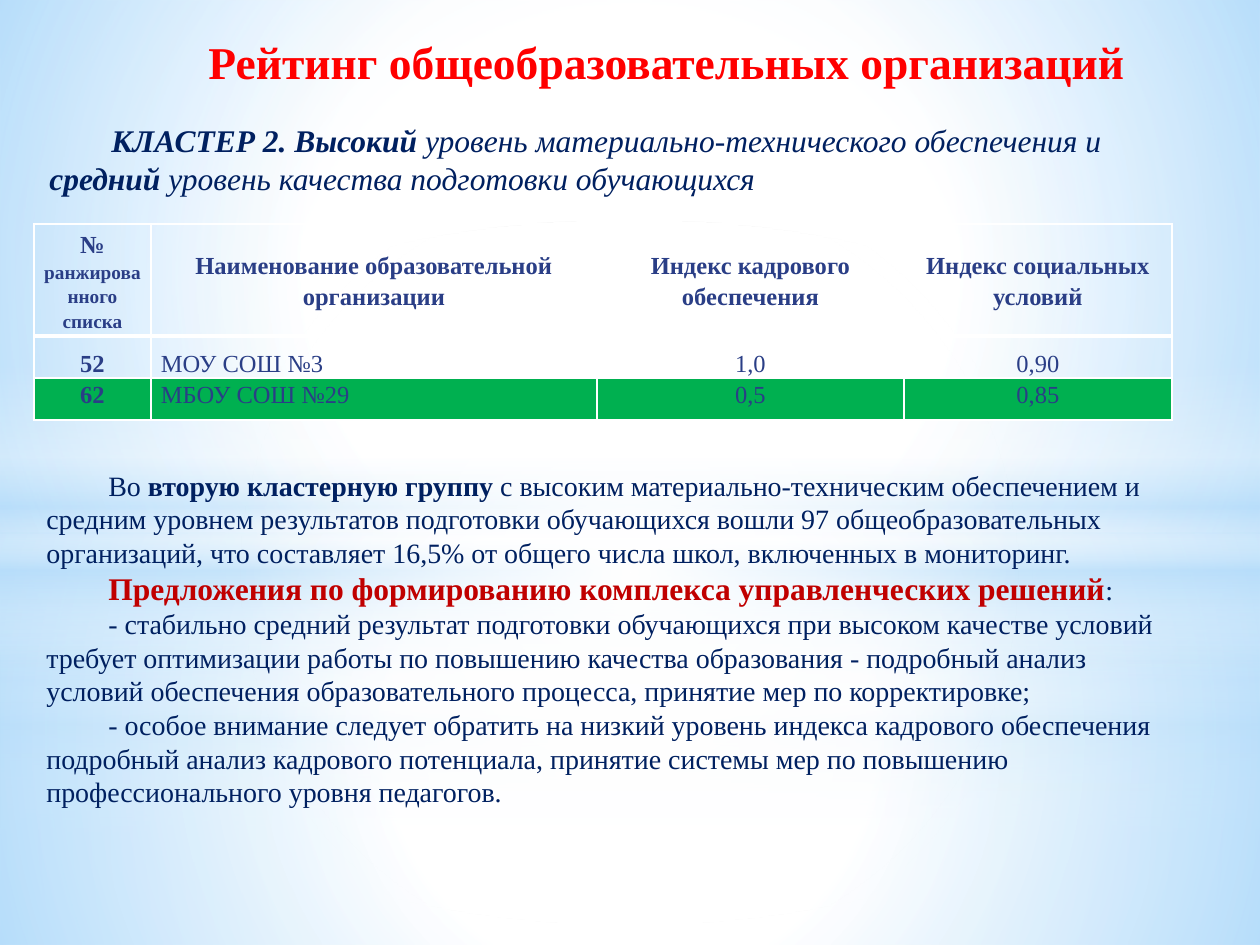
"""Build the slide rating schools in the second cluster."""
from lxml import etree
from pptx import Presentation
from pptx.dml.color import RGBColor
from pptx.enum.shapes import MSO_SHAPE
from pptx.enum.text import MSO_ANCHOR, MSO_AUTO_SIZE, PP_ALIGN
from pptx.oxml import parse_xml
from pptx.oxml.ns import nsdecls
from pptx.util import Pt

RECT, OVAL = MSO_SHAPE.RECTANGLE, MSO_SHAPE.OVAL
TOP, MIDDLE, BOTTOM = MSO_ANCHOR.TOP, MSO_ANCHOR.MIDDLE, MSO_ANCHOR.BOTTOM
LEFT, CENTER = PP_ALIGN.LEFT, PP_ALIGN.CENTER
GROW = MSO_AUTO_SIZE.SHAPE_TO_FIT_TEXT
COLORS = {"white": "FFFFFF", "sky": "B4DCFA", "red": "FF0000", "navy": "002060",
          "crimson": "C00000", "table": "2A3E86", "green": "00B050"}
FONT = "Times New Roman"
INDENT = 62
RADIAL = '<a:path path="circle"><a:fillToRect l="50000" t="50000" r="50000" b="50000"/></a:path>'
LINEAR = '<a:lin ang="5400000" scaled="0"/>'
BAND = [(0, "white", 0), (29, "white", 30), (45, "sky", 40),
        (55, "white", 26), (65, "sky", 60), (100, "white", 0)]


def px(n):
    return round(n * 914400 / 126)


class Deck:
    def __init__(self, width, height):
        self.prs = Presentation()
        self.prs.slide_width, self.prs.slide_height = px(width), px(height)
        self.s = self.prs.slides.add_slide(self.prs.slide_layouts[6])

    def glow(self, kind, top, height, stops, direction=RADIAL):
        sp = self.s.shapes.add_shape(kind, 0, px(top), self.prs.slide_width, px(height))
        sp.shadow.inherit = False
        sp.line.fill.background()
        gs = "".join(
            f'<a:gs pos="{pos * 1000}"><a:srgbClr val="{COLORS[color]}">'
            f'<a:alpha val="{alpha * 1000}"/></a:srgbClr></a:gs>' for pos, color, alpha in stops)
        geometry = sp.element.spPr.find("{*}prstGeom")
        geometry.addnext(parse_xml(f'<a:gradFill {nsdecls("a")} rotWithShape="1">'
                                   f'<a:gsLst>{gs}</a:gsLst>{direction}</a:gradFill>'))

    def run(self, p, text, size, color, bold=False, italic=False):
        r = p.add_run()
        r.text = text
        r.font.name, r.font.size = FONT, Pt(size)
        r.font.bold, r.font.italic = bold, italic
        r.font.color.rgb = RGBColor.from_string(COLORS[color])

    def text(self, box, paragraphs, wrap=True, anchor=TOP):
        tf = self.s.shapes.add_textbox(*map(px, box)).text_frame
        tf.word_wrap, tf.auto_size, tf.vertical_anchor = wrap, GROW, anchor
        for i, runs in enumerate(paragraphs):
            p = tf.add_paragraph() if i else tf.paragraphs[0]
            pPr = p._p.get_or_add_pPr()
            pPr.set("marL", "0")
            pPr.set("indent", str(px(INDENT)))
            for args in runs:
                self.run(p, *args)

    def border(self, cell, side, width):
        ln = etree.SubElement(cell._tc.get_or_add_tcPr(),
                              "{http://schemas.openxmlformats.org/drawingml/2006/main}ln" + side,
                              w=str(Pt(width)))
        ln.append(parse_xml(f'<a:solidFill {nsdecls("a")}>'
                            f'<a:srgbClr val="{COLORS["white"]}"/></a:solidFill>'))

    def cell(self, cell, runs, align, anchor, widths, fill):
        cell.margin_left = cell.margin_right = px(10)
        cell.margin_top = cell.margin_bottom = 0
        cell.vertical_anchor = anchor
        for side, width in zip("LRTB", widths):
            self.border(cell, side, width)
        if fill:
            cell.fill.solid()
            cell.fill.fore_color.rgb = RGBColor.from_string(COLORS[fill])
        else:
            cell.fill.background()
        p = cell.text_frame.paragraphs[0]
        p.alignment, p.line_spacing = align, 1.15
        for text, size, bold in runs:
            self.run(p, text, size, "table", bold)

    def table(self, left, top, widths, heights, rows, styles):
        table = self.s.shapes.add_table(len(rows), len(widths), px(left), px(top),
                                        px(sum(widths)), px(sum(heights))).table
        for column, width in zip(table.columns, widths):
            column.width = px(width)
        for i, (values, (anchor, borders, fill)) in enumerate(zip(rows, styles)):
            table.rows[i].height = px(heights[i])
            for j, value in enumerate(values):
                runs = value if isinstance(value, list) else [(value, 14, i == 0 or j == 0)]
                align = LEFT if i and j == 1 else CENTER
                self.cell(table.cell(i, j), runs, align, anchor, borders, fill)


def main():
    deck = Deck(1260, 945)
    for split, band_top, edge, middle in ((703, 519, 0, 56), (533, 365, 1, 54)):
        deck.glow(RECT, split, 945 - split,
                  [(0, "white", 91 + edge), (37, "white", 76 + edge), (100, "sky", 79 + edge)])
        deck.glow(RECT, 0, split,
                  [(0, "white", 89 + edge), (48, "white", 62 + edge), (100, "sky", 79 + edge)])
        deck.glow(RECT, band_top, 315, BAND, LINEAR)
        deck.glow(OVAL, 221, 703, [(0, "white", 100), (middle, "white", 0)])

    deck.table(
        34, 224, [117, 446, 307, 268], [112, 42, 42],
        [[[("№ ", 14, True), ("ранжированного списка", 11, True)],
          "Наименование образовательной организации",
          "Индекс кадрового обеспечения", "Индекс социальных условий"],
         ["52", "МОУ СОШ №3", "1,0", "0,90"],
         ["62", "МБОУ СОШ №29", "0,5", "0,85"]],
        [(MIDDLE, (1, 1, 1, 3), None), (BOTTOM, (1, 1, 3, 1), None),
         (TOP, (1, 1, 1, 1), "green")])

    deck.text((134, 27, 1013, 68),
              [[("Рейтинг общеобразовательных организаций", 26, "red", True)]],
              wrap=False, anchor=MIDDLE)
    deck.text((37, 115, 1152, 127), [[
        ("КЛАСТЕР 2. Высокий ", 18, "navy", True, True),
        ("уровень материально-технического обеспечения и ", 18, "navy", False, True),
        ("средний ", 18, "navy", True, True),
        ("уровень качества подготовки обучающихся", 18, "navy", False, True)]])
    deck.text((34, 462, 1152, 369), [
        [("Во ", 16, "navy"),
         ("вторую кластерную группу", 16, "navy", True),
         (" с высоким материально-техническим обеспечением и средним уровнем результатов "
          "подготовки обучающихся вошли 97 общеобразовательных организаций, что составляет "
          "16,5% от общего числа школ, включенных в мониторинг.", 16, "navy")],
        [("Предложения по формированию комплекса управленческих решений", 18, "crimson", True),
         (":", 16, "navy")],
        [("- стабильно средний результат подготовки обучающихся при высоком качестве условий "
          "требует оптимизации работы по повышению качества образования - подробный анализ "
          "условий обеспечения образовательного процесса, принятие мер по корректировке;",
          16, "navy")],
        [("- особое внимание следует обратить на низкий уровень индекса кадрового обеспечения "
          "подробный анализ кадрового потенциала, принятие системы мер по повышению "
          "профессионального уровня педагогов.", 16, "navy")]])
    deck.prs.save("out.pptx")


if __name__ == "__main__":
    main()
